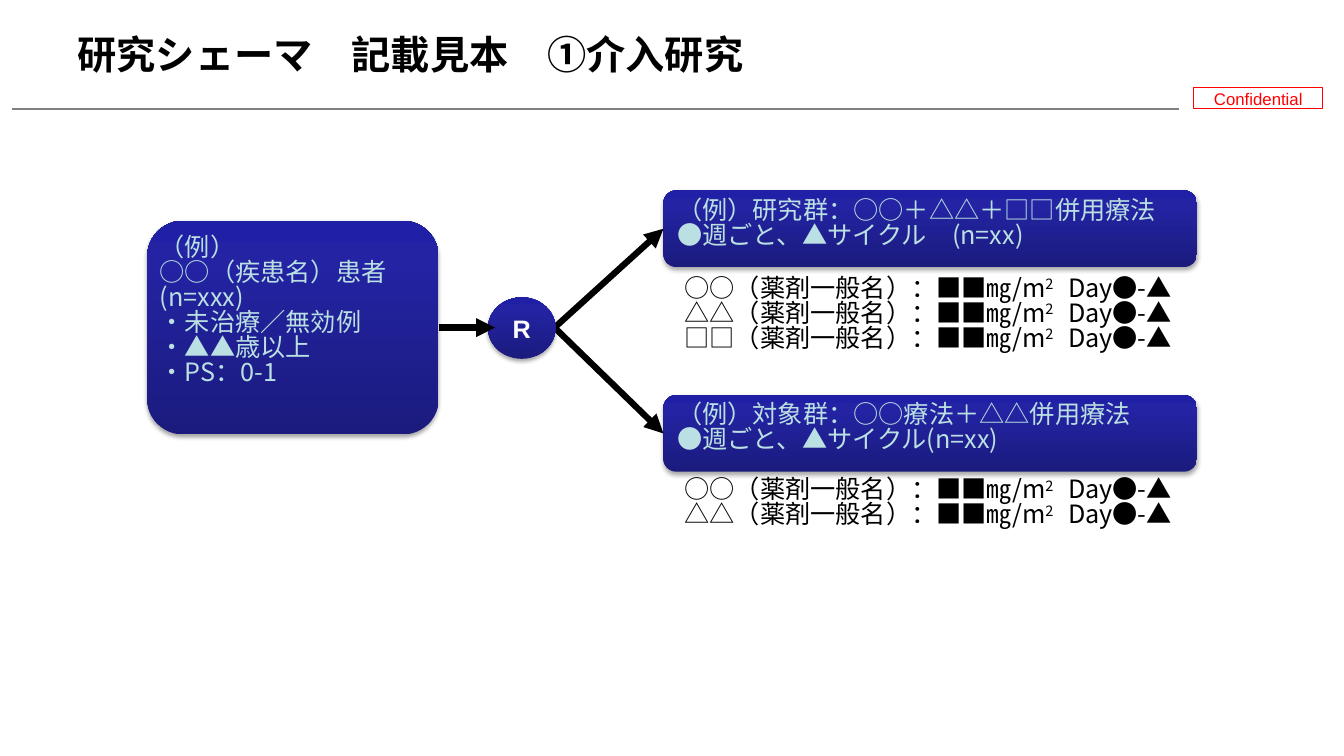
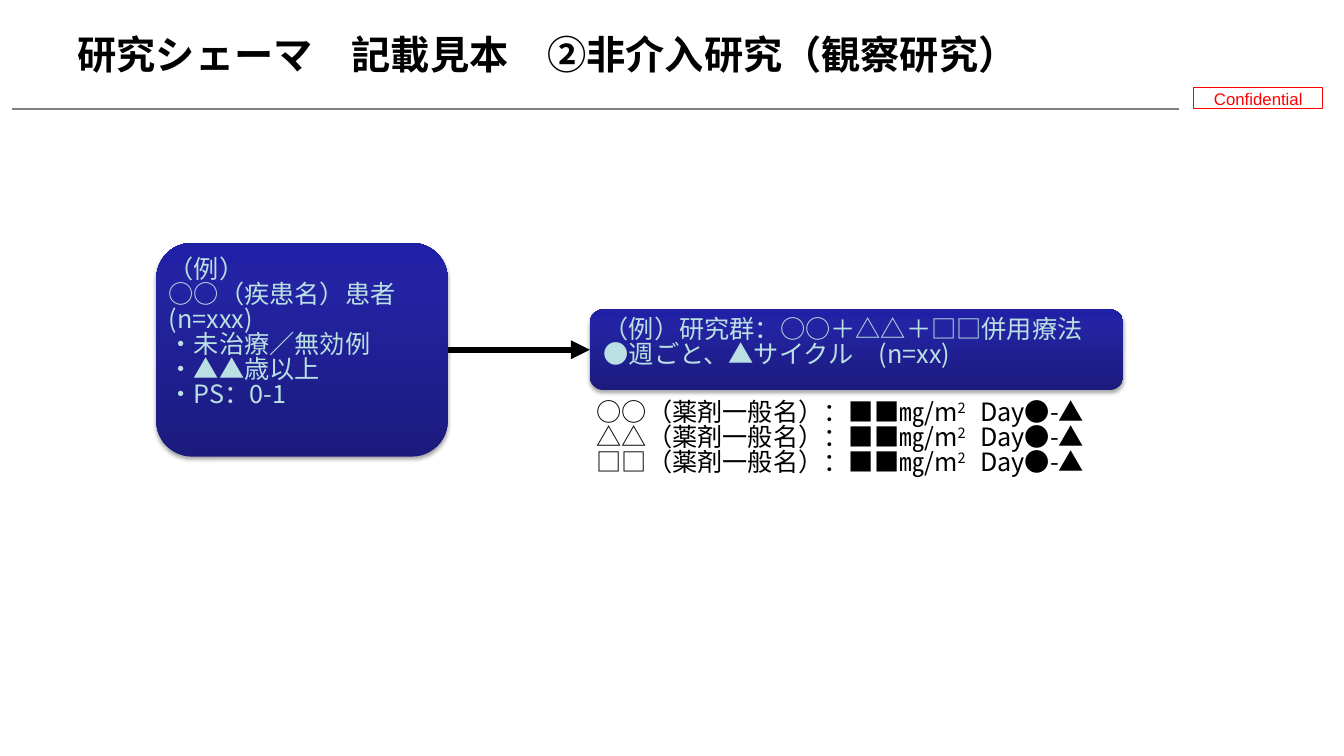
"""Build two sample study-scheme slides: interventional and observational."""
from dataclasses import dataclass

from lxml import etree
from pptx import Presentation
from pptx.dml.color import RGBColor
from pptx.enum.shapes import MSO_CONNECTOR, MSO_SHAPE
from pptx.enum.text import MSO_ANCHOR, PP_ALIGN
from pptx.oxml.ns import qn
from pptx.shapes.autoshape import Shape
from pptx.shapes.connector import Connector
from pptx.slide import Slide
from pptx.text.text import TextFrame, _Paragraph, _Run
from pptx.util import Inches, Pt

STRAIGHT = MSO_CONNECTOR.STRAIGHT
RECT, ROUNDED, OVAL = MSO_SHAPE.RECTANGLE, MSO_SHAPE.ROUNDED_RECTANGLE, MSO_SHAPE.OVAL
TOP, MIDDLE = MSO_ANCHOR.TOP, MSO_ANCHOR.MIDDLE
CENTER, LEFT = PP_ALIGN.CENTER, PP_ALIGN.LEFT

BLACK = RGBColor(0x00, 0x00, 0x00)
WHITE = RGBColor(0xFF, 0xFF, 0xFF)
RED = RGBColor(0xFF, 0x00, 0x00)
GRAY = RGBColor(0x80, 0x80, 0x80)
PALE_CYAN = RGBColor(0xBB, 0xE0, 0xE3)
NAVY_STOPS = (
    (0, RGBColor(0x1B, 0x1B, 0x7E)),
    (80, RGBColor(0x23, 0x23, 0xA3)),
    (100, RGBColor(0x20, 0x20, 0xA6)),
)

JP_FONT = "Noto Sans CJK JP"
LATIN_FONT = "Arial"
BODY_SPACING = 0.83
TITLE_SPACING = 0.9
BOTTOM_SIDE, LEFT_SIDE, RIGHT_SIDE = 2, 1, 3

PATIENT_LINES = (
    "（例）",
    "○○（疾患名）患者\n(n=xxx)",
    "・未治療／無効例",
    "・▲▲歳以上",
    "・PS：0-1",
)
STUDY_LINES = ("（例）研究群：○○＋△△＋□□併用療法", "●週ごと、▲サイクル　(n=xx)")
CONTROL_LINES = ("（例）対象群：○○療法＋△△併用療法", "●週ごと、▲サイクル(n=xx)")
STUDY_DRUGS = ("○○", "△△", "□□")
CONTROL_DRUGS = STUDY_DRUGS[:2]


@dataclass(frozen=True)
class Box:
    """Position and size in inches."""

    left: float
    top: float
    width: float
    height: float

    def lengths(self) -> tuple:
        """Return the four values as lengths."""
        return tuple(Inches(v) for v in (self.left, self.top, self.width, self.height))


@dataclass(frozen=True)
class Arm:
    """A treatment arm: its heading box and the doses listed below it."""

    box: Box
    lines: tuple[str, ...]
    drugs: tuple[str, ...]
    doses: Box


def style_run(r: _Run, size: float, color: RGBColor, font: str = JP_FONT,
              bold: bool = False) -> None:
    """Format one run, including its East Asian font."""
    r.font.size = Pt(size)
    r.font.bold = bold
    r.font.color.rgb = color
    r.font.name = font
    etree.SubElement(r._r.get_or_add_rPr(), qn("a:ea"), typeface=font)


def paragraph_at(tf: TextFrame, index: int) -> _Paragraph:
    """Return the first paragraph or a new one."""
    return tf.paragraphs[0] if index == 0 else tf.add_paragraph()


def add_title(s: Slide, text: str) -> None:
    """Place and format the title."""
    sp = s.shapes.title
    sp.left, sp.top, sp.width, sp.height = Box(0.67, 0.3, 11.83, 0.68).lengths()
    tf = sp.text_frame
    tf.text = text
    tf.vertical_anchor = TOP
    p = tf.paragraphs[0]
    p.alignment = LEFT
    p.line_spacing = TITLE_SPACING
    for r in p.runs:
        style_run(r, 28, BLACK, bold=True)


def add_label(sp: Shape, text: str, size: float, color: RGBColor, bold: bool = False) -> None:
    """Write one centred, unwrapped label in a shape."""
    tf = sp.text_frame
    tf.text = text
    tf.word_wrap = False
    tf.vertical_anchor = MIDDLE
    p = tf.paragraphs[0]
    p.alignment = CENTER
    style_run(p.runs[0], size, color, LATIN_FONT, bold)


def add_line(s: Slide, start: tuple[float, float], end: tuple[float, float],
             color: RGBColor, width: float) -> Connector:
    """Draw a straight line without a shadow."""
    line = s.shapes.add_connector(STRAIGHT, *(Inches(v) for v in start + end))
    line.line.color.rgb = color
    line.line.width = Pt(width)
    etree.SubElement(line._element.spPr, qn("a:effectLst"))
    return line


def add_arrow(s: Slide, start: tuple[float, float], end: tuple[float, float]) -> Connector:
    """Draw a thick black arrow."""
    arrow = add_line(s, start, end, BLACK, 4.5)
    etree.SubElement(arrow.get_or_add_ln(), qn("a:tailEnd"), type="triangle")
    return arrow


def add_frame(s: Slide) -> None:
    """Draw the header rule and the confidentiality tag."""
    sp = s.shapes.add_shape(RECT, *Box(11.84, 0.87, 1.28, 0.21).lengths())
    sp.shadow.inherit = False
    sp.fill.solid()
    sp.fill.fore_color.rgb = WHITE
    sp.line.color.rgb = RED
    sp.line.width = Pt(0.75)
    add_label(sp, "Confidential", 12, RED)
    add_line(s, (0.12, 1.08), (11.69, 1.08), GRAY, 1.5)


def add_navy_shape(s: Slide, kind: MSO_SHAPE, box: Box) -> Shape:
    """Draw a shape with the navy gradient and a soft shadow."""
    sp = s.shapes.add_shape(kind, *box.lengths())
    sp.line.fill.background()
    sp.fill.gradient()
    sp.fill.gradient_angle = 90
    spPr = sp._element.spPr
    stops = spPr.find(".//" + qn("a:gsLst"))
    for stop in list(stops):
        stops.remove(stop)
    for percent, color in NAVY_STOPS:
        stop = etree.SubElement(stops, qn("a:gs"), pos=str(percent * 1000))
        etree.SubElement(stop, qn("a:srgbClr"), val=str(color))
    sp.shadow.inherit = False
    shadow = etree.SubElement(
        spPr.find(qn("a:effectLst")), qn("a:outerShdw"),
        blurRad=str(Pt(3.1)), dist=str(Pt(1.8)), dir="5400000", rotWithShape="0")
    tint = etree.SubElement(shadow, qn("a:srgbClr"), val=str(BLACK))
    etree.SubElement(tint, qn("a:alpha"), val="35000")
    return sp


def add_text_box(s: Slide, box: Box, lines: tuple[str, ...], inset: float) -> Shape:
    """Draw a rounded navy box with left-aligned lines."""
    sp = add_navy_shape(s, ROUNDED, box)
    tf = sp.text_frame
    tf.word_wrap = True
    tf.vertical_anchor = TOP
    tf.margin_left = tf.margin_right = Inches(inset)
    for i, line in enumerate(lines):
        p = paragraph_at(tf, i)
        p.text = line
        p.alignment = LEFT
        p.line_spacing = BODY_SPACING
        for r in p.runs:
            style_run(r, 18, PALE_CYAN)
    return sp


def add_doses(s: Slide, box: Box, drugs: tuple[str, ...]) -> None:
    """List one dose line per drug."""
    tf = s.shapes.add_textbox(*box.lengths()).text_frame
    tf.word_wrap = True
    for i, drug in enumerate(drugs):
        p = paragraph_at(tf, i)
        p.line_spacing = BODY_SPACING
        for text, baseline in ((f"{drug}（薬剤一般名）：■■㎎/m", 0), ("2　", 30000), ("Day●-▲", 0)):
            r = p.add_run()
            r.text = text
            style_run(r, 18, BLACK)
            if baseline:
                r._r.get_or_add_rPr().set("baseline", str(baseline))


def add_arm(s: Slide, arm: Arm) -> Shape:
    """Draw a treatment arm and return its heading box."""
    add_doses(s, arm.doses, arm.drugs)
    return add_text_box(s, arm.box, arm.lines, 0.1)


def add_patients(s: Slide, left: float, top: float) -> Shape:
    """Draw the box that describes the patients."""
    return add_text_box(s, Box(left, top, 2.89, 2.12), PATIENT_LINES, 0.02)


def add_slide(prs: Presentation, title: str) -> Slide:
    """Add a slide with the shared frame and title."""
    s = prs.slides.add_slide(prs.slide_layouts[5])
    add_frame(s)
    add_title(s, title)
    return s


def build_interventional(prs: Presentation) -> None:
    """Build the randomised two-arm scheme."""
    s = add_slide(prs, "研究シェーマ　記載見本　①介入研究")
    patients = add_patients(s, 1.46, 2.19)
    fork = (5.5, 3.25)
    arms = (
        Arm(Box(6.58, 1.89, 5.29, 0.76), STUDY_LINES, STUDY_DRUGS, Box(6.69, 2.7, 5.88, 1.01)),
        Arm(Box(6.58, 3.92, 5.29, 0.76), CONTROL_LINES, CONTROL_DRUGS,
            Box(6.69, 4.7, 5.88, 0.71)),
    )
    for arm in arms:
        heading = add_arm(s, arm)
        arrow = add_arrow(s, fork, (arm.box.left, arm.box.top + arm.box.height / 2))
        arrow.end_connect(heading, LEFT_SIDE)
    add_label(add_navy_shape(s, OVAL, Box(4.84, 2.95, 0.67, 0.61)), "R", 18, WHITE, True)
    add_arrow(s, (4.35, 3.25), (4.91, 3.25)).begin_connect(patients, RIGHT_SIDE)


def build_observational(prs: Presentation) -> None:
    """Build the single-arm scheme."""
    s = add_slide(prs, "研究シェーマ　記載見本　②非介入研究（観察研究）")
    patients = add_patients(s, 1.55, 2.41)
    heading = add_arm(s, Arm(Box(5.85, 3.07, 5.29, 0.8), STUDY_LINES, STUDY_DRUGS,
                             Box(5.82, 3.93, 5.88, 1.01)))
    arrow = add_arrow(s, (4.44, 3.47), (5.85, 3.47))
    arrow.begin_connect(patients, RIGHT_SIDE)
    arrow.end_connect(heading, LEFT_SIDE)


def main() -> None:
    """Create and save the presentation."""
    prs = Presentation()
    prs.slide_width, prs.slide_height = Inches(13.33), Inches(7.5)
    build_interventional(prs)
    build_observational(prs)
    prs.save("out.pptx")


if __name__ == "__main__":
    main()
